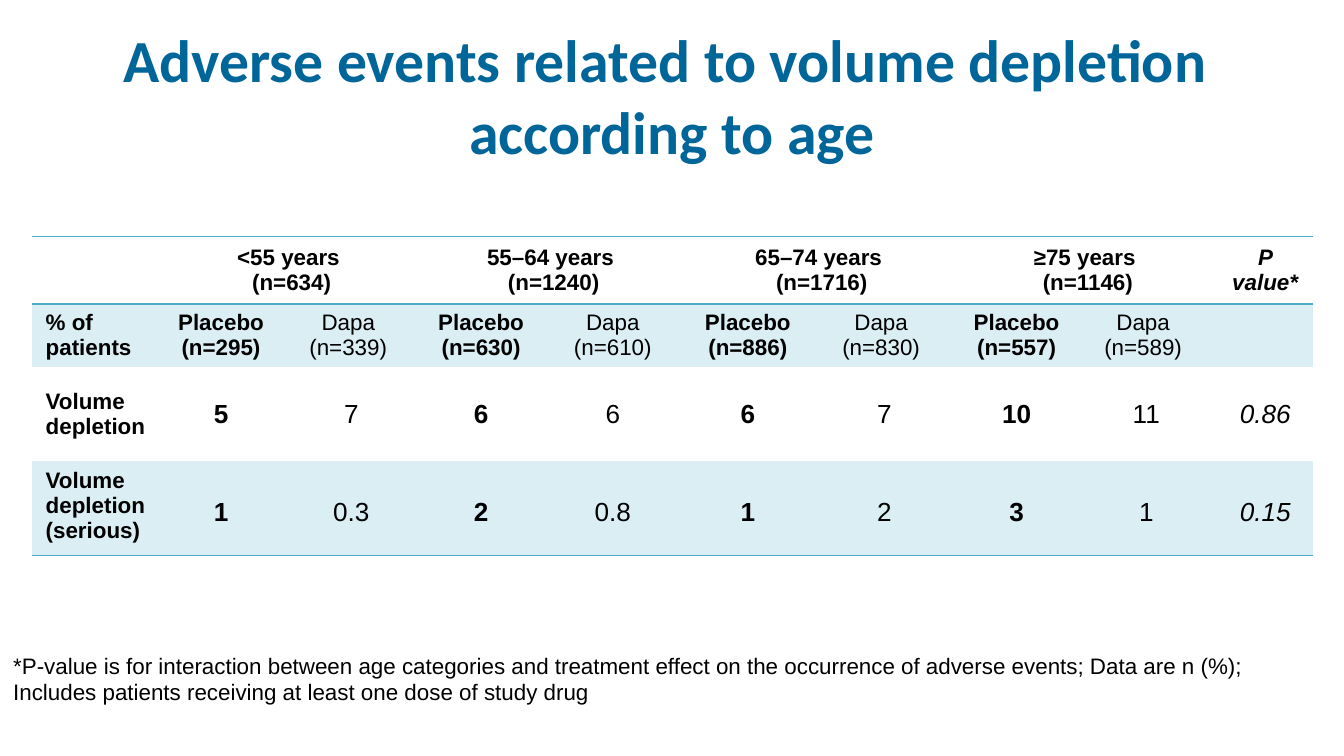
from pptx import Presentation
from pptx.dml.color import RGBColor
from pptx.enum.text import MSO_ANCHOR, PP_ALIGN
from pptx.oxml import parse_xml
from pptx.oxml.ns import nsdecls
from pptx.util import Inches, Pt

LEFT, CENTER = PP_ALIGN.LEFT, PP_ALIGN.CENTER
TOP, MIDDLE = MSO_ANCHOR.TOP, MSO_ANCHOR.MIDDLE

BLUE = RGBColor(0x00, 0x66, 0x99)
TEAL = RGBColor(0x4B, 0xAC, 0xC6)
PALE_TEAL = RGBColor(0xDB, 0xEE, 0xF4)
BLACK = RGBColor(0x00, 0x00, 0x00)

PLAIN_TABLE_STYLE = "{2D5ABB26-0587-4C30-8999-92F81FD0307C}"
COLUMN_WIDTHS = [0.96, 0.89, 1.05, 0.88, 1.08, 0.93, 1.1, 0.87, 1.06, 0.71]
ROW_HEIGHTS = [0.5, 0.47, 0.7, 0.7]
LINED_SIDES = {0: ("T", "B"), 3: ("B",)}
BANDED_ROWS = (1, 3)

# Age group, patients, placebo patients, dapa heading lines
AGE_GROUPS = [
    ("<55 years", 634, 295, ["Dapa ", "(n=339) "]),
    ("55–64 years", 1240, 630, ["Dapa", " (n=610) "]),
    ("65–74 years", 1716, 886, ["Dapa ", "(n=830) "]),
    ("≥75 years", 1146, 557, ["Dapa ", "(n=589) "]),
]
# Row label, placebo and dapa percentages by age group, P value
EVENTS = [
    ("Volume depletion", ["5", "7", "6", "6", "6", "7", "10", "11"], "0.86"),
    ("Volume depletion (serious)",
     ["1", "0.3", "2", "0.8", "1", "2", "3", "1"], "0.15"),
]


def add_run(paragraph, text, size, color=BLACK, font="Arial", bold=False, italic=False):
    run = paragraph.add_run()
    run.text = text
    run.font.name = font
    run.font.size = Pt(size)
    run.font.color.rgb = color
    run.font.bold = bold
    run.font.italic = italic


def add_title(slide):
    title = slide.shapes.title
    title.left, title.top = Inches(0), Inches(0.25)
    title.width, title.height = Inches(10), Inches(0.91)
    frame = title.text_frame
    frame.word_wrap = True
    frame.vertical_anchor = MIDDLE
    paragraph = frame.paragraphs[0]
    paragraph.alignment = CENTER
    add_run(paragraph, "Adverse events related to volume depletion ", 32, BLUE, "Calibri", True)
    paragraph.add_line_break()
    add_run(paragraph, "according to age", 32, BLUE, "Calibri", True)


def write_cell(cell, lines, size=12, align=CENTER, anchor=MIDDLE, **style):
    cell.vertical_anchor = anchor
    frame = cell.text_frame
    for index, line in enumerate(lines):
        paragraph = frame.add_paragraph() if index else frame.paragraphs[0]
        paragraph.alignment = align
        add_run(paragraph, line, size, **style)


def add_border(cell, side):
    cell._tc.get_or_add_tcPr().append(parse_xml(
        f'<a:ln{side} {nsdecls("a")} w="{Pt(1)}"><a:solidFill>'
        f'<a:srgbClr val="{TEAL}"/></a:solidFill></a:ln{side}>'))


def format_cells(table):
    for row_index, row in enumerate(table.rows):
        for cell in row.cells:
            for side in LINED_SIDES.get(row_index, ()):
                add_border(cell, side)
            if row_index in BANDED_ROWS:
                cell.fill.solid()
                cell.fill.fore_color.rgb = PALE_TEAL
            else:
                cell.fill.background()


def fill_headings(table):
    for index, (ages, total, placebo, dapa_lines) in enumerate(AGE_GROUPS):
        column = 1 + 2 * index
        group = table.cell(0, column)
        group.merge(table.cell(0, column + 1))
        write_cell(group, [f"{ages} ", f"(n={total})"], bold=True)
        write_cell(table.cell(1, column), [f"Placebo (n={placebo})"], bold=True)
        write_cell(table.cell(1, column + 1), dapa_lines)
    write_cell(table.cell(0, 9), ["P value*"], bold=True, italic=True)
    write_cell(table.cell(1, 0), ["% of patients"], align=LEFT, anchor=TOP, bold=True)


def fill_events(table):
    for row, (label, values, p_value) in enumerate(EVENTS, start=2):
        # The last row hangs from the top, its numbers one line lower
        anchor = TOP if row == 3 else MIDDLE
        write_cell(table.cell(row, 0), [label], align=LEFT, anchor=anchor, bold=True)
        for column, value in enumerate(values, start=1):
            write_cell(table.cell(row, column), [value], 14, anchor=anchor,
                       bold=column % 2 == 1)
        write_cell(table.cell(row, 9), [p_value], 14, anchor=anchor, italic=True)
        if anchor == TOP:
            for column in range(1, 10):
                table.cell(row, column).margin_top = Inches(0.27)


def add_events_table(slide):
    frame = slide.shapes.add_table(
        len(ROW_HEIGHTS), len(COLUMN_WIDTHS), Inches(0.24), Inches(1.76),
        Inches(sum(COLUMN_WIDTHS)), Inches(sum(ROW_HEIGHTS)))
    table = frame.table
    table.first_row = table.horz_banding = False
    table._tbl.tblPr[0].text = PLAIN_TABLE_STYLE
    for column, width in zip(table.columns, COLUMN_WIDTHS):
        column.width = Inches(width)
    for row, height in zip(table.rows, ROW_HEIGHTS):
        row.height = Inches(height)
    format_cells(table)
    fill_headings(table)
    fill_events(table)


def add_footnote(slide):
    box = slide.shapes.add_textbox(Inches(0), Inches(4.8), Inches(10), Inches(0.5))
    box.text_frame.word_wrap = True
    add_run(box.text_frame.paragraphs[0],
            "*P-value is for interaction between age categories and treatment effect "
            "on the occurrence of adverse events; Data are n (%); "
            "Includes patients receiving at least one dose of study drug", 12)


def main():
    presentation = Presentation()
    # Widescreen, 16 to 9
    presentation.slide_width = Inches(10)
    presentation.slide_height = Inches(10 * 9 / 16)
    slide = presentation.slides.add_slide(presentation.slide_layouts[5])
    add_title(slide)
    add_events_table(slide)
    add_footnote(slide)
    presentation.save("out.pptx")


if __name__ == "__main__":
    main()
